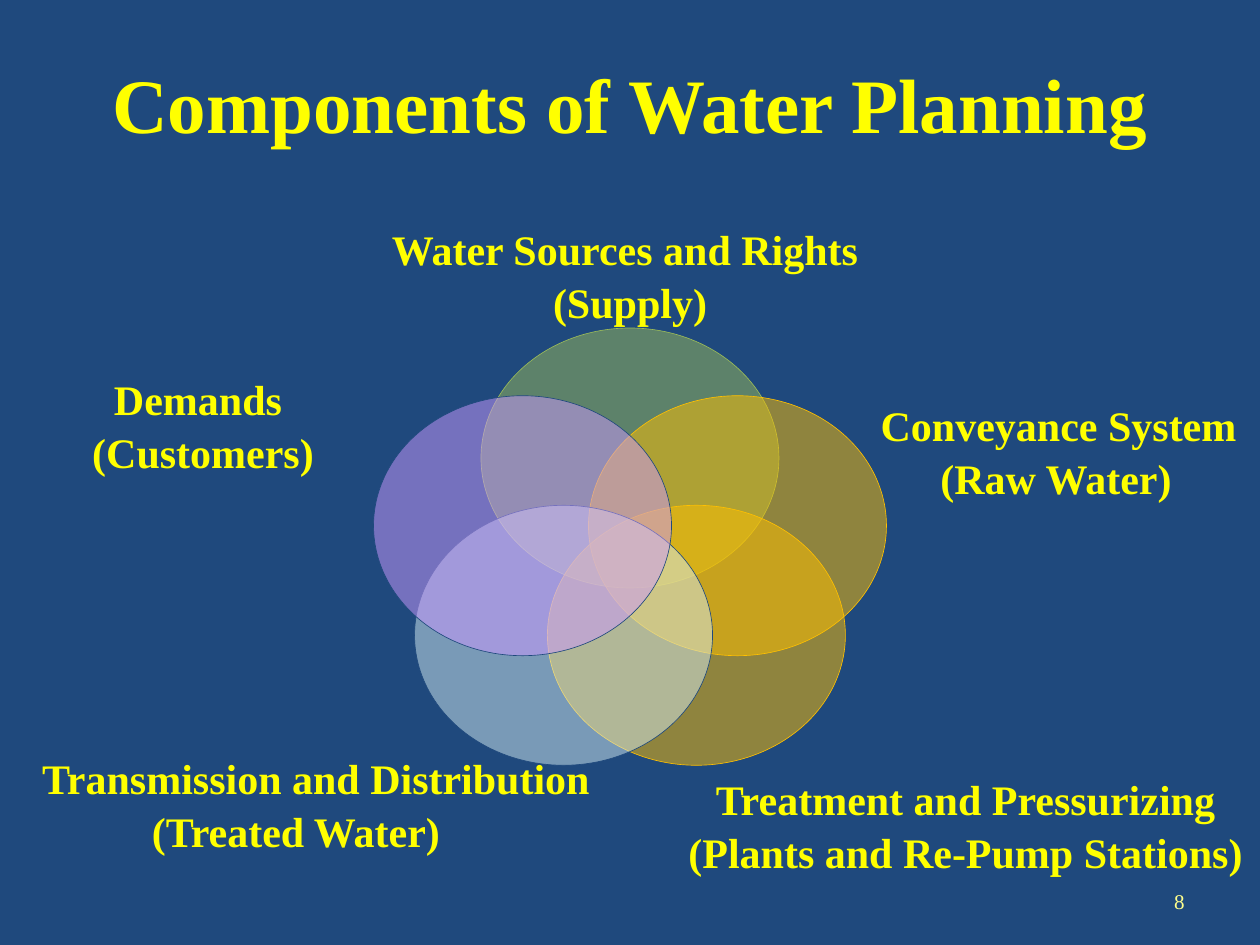
import math

from pptx import Presentation
from pptx import util as u
from pptx.dml.color import RGBColor
from pptx.enum import shapes, text
from pptx.oxml import ns
from lxml import etree

SCALE = 914400 / 126
FONT = "Times New Roman"
NAVY = RGBColor(0x1F, 0x49, 0x7D)
YELLOW = RGBColor(0xFF, 0xFF, 0x00)
PALE_YELLOW = RGBColor(0xFF, 0xFF, 0x8C)
GREEN = RGBColor(0x9B, 0xBB, 0x59)
AMBER = RGBColor(0xFF, 0xC0, 0x00)
ICE = RGBColor(0xD3, 0xEB, 0xF1)
LILAC = RGBColor(0xCC, 0x99, 0xFF)

CIRCLES = [(GREEN, GREEN), (AMBER, AMBER), (AMBER, AMBER), (ICE, NAVY), (LILAC, NAVY)]
LABELS = [
    ((325, 224, 600, 100), [("Water Sources and Rights", 0), ("(Supply)", 10)]),
    ((871, 400, 370, 100), [("Conveyance System", 5), ("(Raw Water)", 0)]),
    ((0, 753, 592, 100), [("Transmission and Distribution", 40), ("(Treated Water)", 0)]),
    ((685, 774, 561, 100), [("Treatment and Pressurizing", 0), ("(Plants and Re-Pump Stations)", 0)]),
    ((48, 374, 300, 100), [("Demands", 0), ("(Customers)", 10)]),
]


def px(length):
    """Turn pixels into EMU."""
    return u.Emu(round(length * SCALE))


def style(para, size, color, bold, align):
    """Format a whole paragraph."""
    para.alignment = align
    para.font.name = FONT
    para.font.size = u.Pt(size)
    para.font.bold = bold
    para.font.color.rgb = color


def add_title(page, box, wording):
    """Fill and place the title placeholder."""
    title = page.shapes.title
    title.left, title.top, title.width, title.height = map(px, box)
    title.text_frame.text = wording
    title.text_frame.vertical_anchor = text.MSO_ANCHOR.MIDDLE
    style(title.text_frame.paragraphs[0], 44, YELLOW, True, text.PP_ALIGN.CENTER)


def add_circle(page, box, fill_color, line_color):
    """Draw one half-transparent oval."""
    oval = page.shapes.add_shape(shapes.MSO_SHAPE.OVAL, *map(px, box))
    oval.shadow.inherit = False
    oval.fill.solid()
    oval.fill.fore_color.rgb = fill_color
    color = oval._element.spPr.find(ns.qn("a:solidFill"))[0]
    etree.SubElement(color, ns.qn("a:alpha"), val="50000")
    oval.line.color.rgb = line_color
    oval.line.width = u.Pt(0.37)


def add_venn(page, box):
    """Set five overlapping ovals evenly around the centre of the box."""
    left, top, width, height = box
    oval_width, oval_height = 298, 260
    radius_x, radius_y = 113, 98
    for index, colors in enumerate(CIRCLES):
        angle = index * math.tau / len(CIRCLES)
        x = left + width / 2 + radius_x * math.sin(angle) - oval_width / 2
        y = top + radius_y * (1 - math.cos(angle))
        add_circle(page, (x, y, oval_width, oval_height), *colors)


def add_label(page, box, lines):
    """Write a centred label whose lines may be indented."""
    frame = page.shapes.add_textbox(*map(px, box)).text_frame
    frame.word_wrap = True
    frame.margin_left = frame.margin_right = frame.margin_top = frame.margin_bottom = 0
    for index, (wording, indent) in enumerate(lines):
        para = frame.add_paragraph() if index else frame.paragraphs[0]
        para.text = wording
        if indent:
            para._p.get_or_add_pPr().set("marL", str(px(indent)))
        if index:
            para.space_before = u.Pt(1.4)
        style(para, 24, YELLOW, True, text.PP_ALIGN.CENTER)


def add_page_number(page, box, number):
    """Write the page number at the right of the box."""
    frame = page.shapes.add_textbox(*map(px, box)).text_frame
    frame.word_wrap = True
    frame.vertical_anchor = text.MSO_ANCHOR.MIDDLE
    frame.text = number
    style(frame.paragraphs[0], 12, PALE_YELLOW, False, text.PP_ALIGN.RIGHT)


def main():
    """Build the slide and save it."""
    deck = Presentation()
    deck.slide_width, deck.slide_height = px(1260), px(945)
    page = deck.slides.add_slide(deck.slide_layouts[5])
    page.background.fill.solid()
    page.background.fill.fore_color.rgb = NAVY
    add_title(page, (0, 38, 1260, 130), "Components of Water Planning")
    add_venn(page, (374, 328, 512, 439))
    for box, lines in LABELS:
        add_label(page, box, lines)
    add_page_number(page, (903, 876, 294, 50), "8")
    deck.save("out.pptx")


if __name__ == "__main__":
    main()
